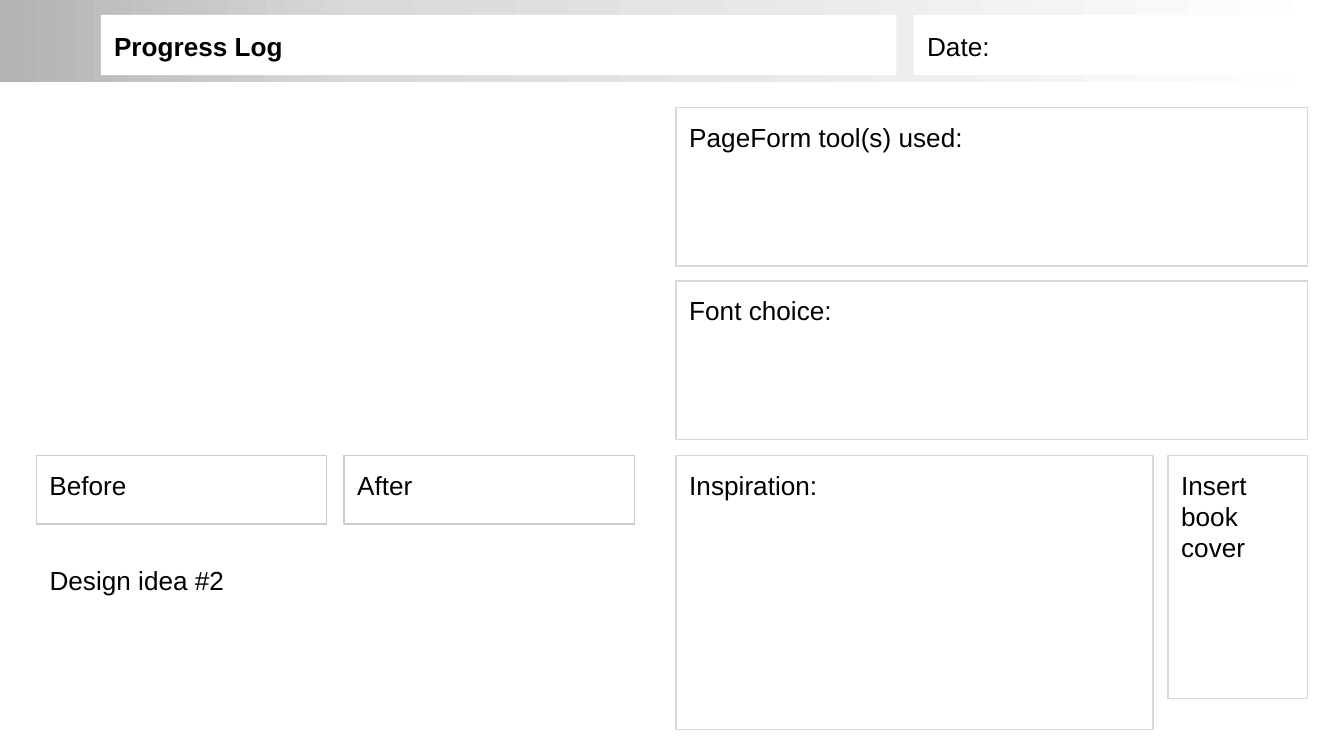
"""Build a progress log slide with a header band and labelled panels."""
from copy import deepcopy
from typing import NamedTuple, Optional

from pptx import Presentation
from pptx import util as u
from pptx.dml.color import RGBColor
from pptx.enum import shapes, text
from pptx.oxml.ns import qn
from pptx.slide import Slide

WHITE = RGBColor(0xFF, 0xFF, 0xFF)
BLACK = RGBColor(0x00, 0x00, 0x00)
LIGHT_GREY = RGBColor(0xD9, 0xD9, 0xD9)
MID_GREY = RGBColor(0xCC, 0xCC, 0xCC)
DARK_GREY = RGBColor(0xB3, 0xB3, 0xB3)

SLIDE_WIDTH = 10
SLIDE_HEIGHT = SLIDE_WIDTH * 9 / 16
HEADER_TOP, HEADER_HEIGHT = 0.11, 0.45
LEFT_COLUMN, RIGHT_COLUMN = 0.27, 5.03
PANEL_WIDTH, PANEL_HEIGHT = 4.7, 1.18
ROWS = (0.8, 2.09, 3.39)
STAGE_WIDTH, STAGE_HEIGHT, STAGE_GAP = 2.16, 0.51, 0.13


class Panel(NamedTuple):
    label: str
    left: float
    top: float
    width: float
    height: float
    border: Optional[RGBColor] = LIGHT_GREY
    fill: Optional[RGBColor] = None
    bold: bool = False
    anchor: text.MSO_ANCHOR = text.MSO_ANCHOR.TOP


def header(label: str, left: float, width: float, bold: bool = False) -> Panel:
    return Panel(label, left, HEADER_TOP, width, HEADER_HEIGHT, None, WHITE,
                 bold, text.MSO_ANCHOR.BOTTOM)


def stage(label: str, column: int) -> Panel:
    left = LEFT_COLUMN + column * (STAGE_WIDTH + STAGE_GAP)
    return Panel(label, left, ROWS[2], STAGE_WIDTH, STAGE_HEIGHT, MID_GREY)


PANELS = (
    header("Date:", 6.8, 3.07),
    header("Progress Log", 0.75, 5.92, bold=True),
    stage("Before", 0),
    stage("After", 1),
    Panel("PageForm tool(s) used:", RIGHT_COLUMN, ROWS[0], PANEL_WIDTH, PANEL_HEIGHT),
    Panel("Font choice:", RIGHT_COLUMN, ROWS[1], PANEL_WIDTH, PANEL_HEIGHT),
    Panel("Inspiration:", RIGHT_COLUMN, ROWS[2], 3.55, 2.04),
    Panel("Insert book cover", 8.69, ROWS[2], 1.04, 1.81),
    Panel("Design idea #2", LEFT_COLUMN, 4.1, 3.01, 0.62, None),
)


def draw_band(slide: Slide) -> None:
    band = slide.shapes.add_shape(
        shapes.MSO_SHAPE.RECTANGLE,
        u.Inches(-0.01), u.Inches(-0.02), u.Inches(SLIDE_WIDTH), u.Inches(0.63))
    band.shadow.inherit = False
    band.line.fill.background()
    band.fill.gradient()
    band.fill.gradient_angle = 180
    stop_list = next(band._element.iter(qn("a:gsLst")))
    stop_list.append(deepcopy(stop_list[-1]))
    colours = ((0, WHITE), (0.73, LIGHT_GREY), (1, DARK_GREY))
    for stop, (position, colour) in zip(band.fill.gradient_stops, colours):
        stop.position = position
        stop.color.rgb = colour


def draw_panel(slide: Slide, panel: Panel) -> None:
    place = [u.Inches(n) for n in (panel.left, panel.top, panel.width, panel.height)]
    if panel.border is None and panel.fill is None:
        box = slide.shapes.add_textbox(*place)
    else:
        box = slide.shapes.add_shape(shapes.MSO_SHAPE.RECTANGLE, *place)
        box.shadow.inherit = False
    if panel.fill is None:
        box.fill.background()
    else:
        box.fill.solid()
        box.fill.fore_color.rgb = panel.fill
    if panel.border is None:
        box.line.fill.background()
    else:
        box.line.color.rgb = panel.border
        box.line.width = u.Pt(0.75)

    frame = box.text_frame
    frame.word_wrap = True
    frame.vertical_anchor = panel.anchor
    frame.margin_left = frame.margin_right = u.Inches(0.1)
    frame.margin_top = frame.margin_bottom = u.Inches(0.1)
    paragraph = frame.paragraphs[0]
    paragraph.alignment = text.PP_ALIGN.LEFT
    run = paragraph.add_run()
    run.text = panel.label
    run.font.name = "Arial"
    run.font.size = u.Pt(14)
    run.font.bold = panel.bold
    run.font.color.rgb = BLACK


def main() -> None:
    deck = Presentation()
    deck.slide_width = u.Inches(SLIDE_WIDTH)
    deck.slide_height = u.Inches(SLIDE_HEIGHT)
    slide = deck.slides.add_slide(deck.slide_layouts[6])
    draw_band(slide)
    for panel in PANELS:
        draw_panel(slide, panel)
    deck.save("out.pptx")


if __name__ == "__main__":
    main()
